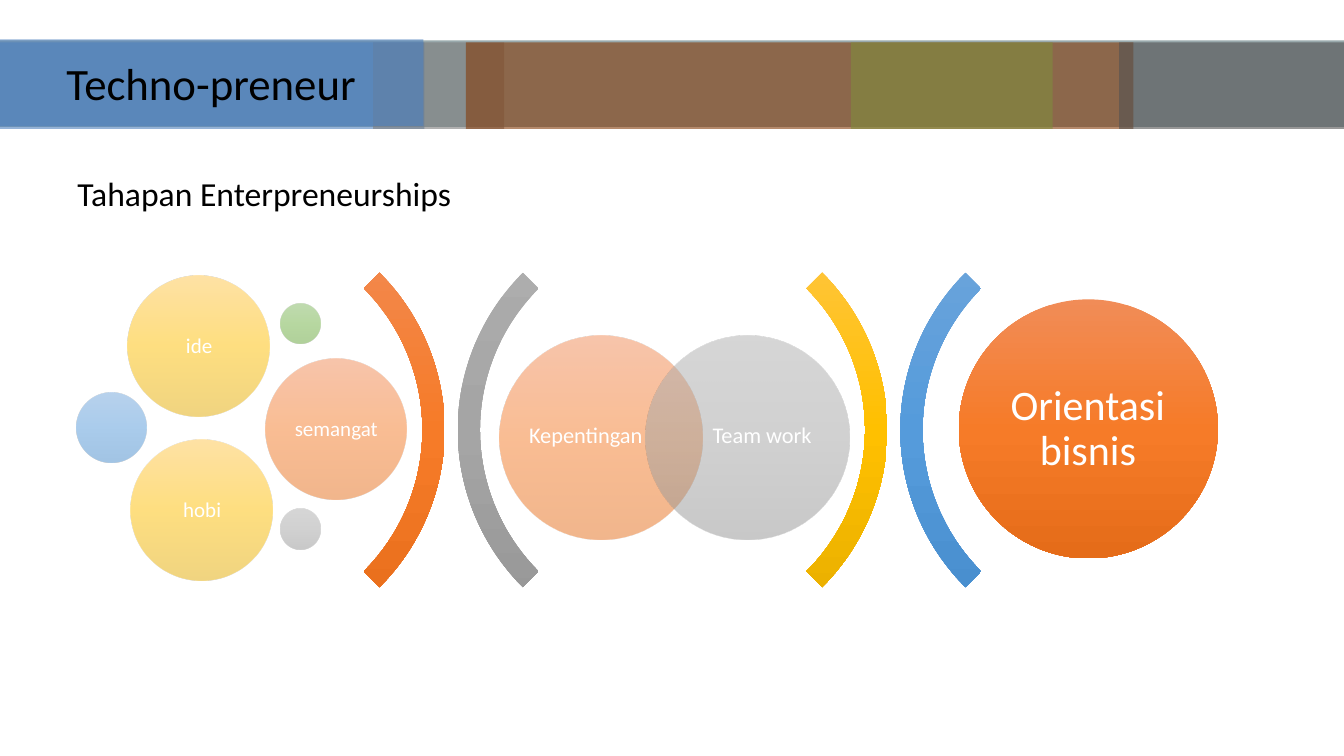
from lxml.etree import SubElement
from pptx import Presentation
from pptx.dml.color import RGBColor
from pptx.enum.shapes import MSO_SHAPE as Preset
from pptx.enum.text import MSO_ANCHOR as Anchor, MSO_AUTO_SIZE as AutoSize, PP_ALIGN as Align
from pptx.oxml.ns import qn
from pptx.util import Emu, Pt

PX = 9144
FONT = "Calibri"

BLACK = RGBColor(0x00, 0x00, 0x00)
WHITE = RGBColor(0xFF, 0xFF, 0xFF)
TEAL = RGBColor(0x56, 0x71, 0x76)
NAVY = RGBColor(0x4F, 0x81, 0xBD)
SILVER = RGBColor(0x7C, 0x7C, 0x7C)
BROWN = RGBColor(0x84, 0x3C, 0x0B)
CHARCOAL = RGBColor(0x52, 0x52, 0x52)
OLIVE = RGBColor(0x7F, 0x8C, 0x3C)
ORANGE = RGBColor(0xF1, 0x8C, 0x57), RGBColor(0xF6, 0x7B, 0x28), RGBColor(0xE5, 0x6C, 0x19)
GRAY = RGBColor(0xAF, 0xAF, 0xAF), RGBColor(0xA5, 0xA5, 0xA5), RGBColor(0x93, 0x93, 0x93)
GOLD = RGBColor(0xFF, 0xC6, 0x4B), RGBColor(0xFF, 0xC0, 0x00), RGBColor(0xE3, 0xAB, 0x00)
BLUE = RGBColor(0x71, 0xA6, 0xDB), RGBColor(0x55, 0x9B, 0xDB), RGBColor(0x44, 0x8A, 0xCA)
GREEN = RGBColor(0x81, 0xB8, 0x61), RGBColor(0x6F, 0xB2, 0x42), RGBColor(0x62, 0xA3, 0x36)


def emu(*lengths):
    return [Emu(length * PX) for length in lengths]


def add_plain_shape(page, preset, box):
    shape = page.shapes.add_shape(preset, *emu(*box))
    shape.shadow.inherit = False
    shape.line.fill.background()
    return shape


def set_opacity(color_element, percent):
    SubElement(color_element, qn("a:alpha"), val=str(percent * 1000))


def fill_gradient(shape, colors, opacity):
    shape.fill.gradient()
    shape.fill.gradient_angle = 270
    gradient = shape.fill._xPr.find(qn("a:gradFill"))
    gradient.set("rotWithShape", "0")
    stops = gradient.find(qn("a:gsLst"))
    for stop in list(stops):
        stops.remove(stop)
    for index, color in enumerate(colors):
        stop = SubElement(stops, qn("a:gs"), pos=str(index * 50000))
        set_opacity(SubElement(stop, qn("a:srgbClr"), val=str(color)), opacity)


def write(para, text, size, color):
    span = para.add_run()
    span.text = text
    span.font.name = FONT
    span.font.size = Pt(size)
    span.font.color.rgb = color


def add_bar(page, box, color):
    bar = add_plain_shape(page, Preset.RECTANGLE, box)
    bar.fill.solid()
    bar.fill.fore_color.rgb = color
    set_opacity(bar.fill._xPr.find(qn("a:solidFill"))[0], 60)
    return bar


def add_banner(page, left, top, height):
    bars = [
        (-33, 0, 1400, TEAL),
        (0, 2, 421, NAVY),
        (370, 2, 130, SILVER),
        (462, 2, 662, BROWN),
        (1110, 2, 224, CHARCOAL),
        (844, 2, 200, OLIVE),
    ]
    for x, y, width, color in bars:
        add_bar(page, (left + x, top + y, width, height), color)
    frame = add_bar(page, (left - 1, top - 1, 421, height), NAVY).text_frame
    frame.vertical_anchor = Anchor.MIDDLE
    para = frame.paragraphs[0]
    para.alignment = Align.CENTER
    write(para, "Techno-preneur", 32, BLACK)


def add_heading(page, box):
    frame = page.shapes.add_textbox(*emu(*box)).text_frame
    frame.word_wrap = False
    frame.auto_size = AutoSize.SHAPE_TO_FIT_TEXT
    write(frame.paragraphs[0], "Tahapan Enterpreneurships", 24, BLACK)


def add_circle(page, left, top, size, colors, opacity=50):
    circle = add_plain_shape(page, Preset.OVAL, (left, top, size, size))
    fill_gradient(circle, colors, opacity)


def add_label(page, box, text, size, inset=0):
    frame = page.shapes.add_textbox(*emu(*box)).text_frame
    frame.word_wrap = True
    frame.vertical_anchor = Anchor.MIDDLE
    frame.margin_left = frame.margin_top = frame.margin_right = frame.margin_bottom = Emu(inset * PX)
    para = frame.paragraphs[0]
    para.alignment = Align.CENTER
    para.line_spacing = 0.9
    write(para, text, size, WHITE)


def add_brackets(page, top, size):
    brackets = [(0, 90, ORANGE), (454, 270, GRAY), (439, 90, GOLD), (893, 270, BLUE)]
    for left, rotation, colors in brackets:
        arc = add_plain_shape(page, Preset.BLOCK_ARC, (left, top, size, size))
        for index, value in enumerate((135, 189, 0.05)):
            arc.adjustments[index] = value
        arc.rotation = rotation
        fill_gradient(arc, colors, 100)


def add_interests(page, left, top):
    size = 202
    topics = [("Kepentingan", 0, 28, ORANGE), ("Team work", 145, 58, GRAY)]
    for text, x, indent, colors in topics:
        add_circle(page, left + x, top, size, colors)
        add_label(page, (left + x + indent, top + 23, 116, 154), text, 16)


def add_ideas(page, left, top):
    bubbles = [
        (51, 0, 140, GOLD, "ide"),
        (0, 117, 69, BLUE, None),
        (202, 28, 40, GREEN, None),
        (187, 83, 140, ORANGE, "semangat"),
        (202, 232, 40, GRAY, None),
        (54, 163, 140, GOLD, "hobi"),
    ]
    for x, y, size, colors, text in bubbles:
        add_circle(page, left + x, top + y, size, colors)
        if text:
            add_label(page, (left + x + 21, top + y + 21, 99, 99), text, 15, 6)


def add_goal(page, left, top, size):
    add_circle(page, left, top, size, ORANGE, 100)
    add_label(page, (left + 37, top + 38, 182, 182), "Orientasi bisnis", 30, 12)


def main():
    deck = Presentation()
    deck.slide_width, deck.slide_height = emu(1333, 750)
    page = deck.slides.add_slide(deck.slide_layouts[6])
    add_banner(page, 0, 40, 86)
    add_brackets(page, 206, 441)
    add_interests(page, 495, 333)
    add_ideas(page, 76, 273)
    add_goal(page, 951, 297, 257)
    add_heading(page, (67, 167, 395, 50))
    deck.save("out.pptx")


if __name__ == "__main__":
    main()
